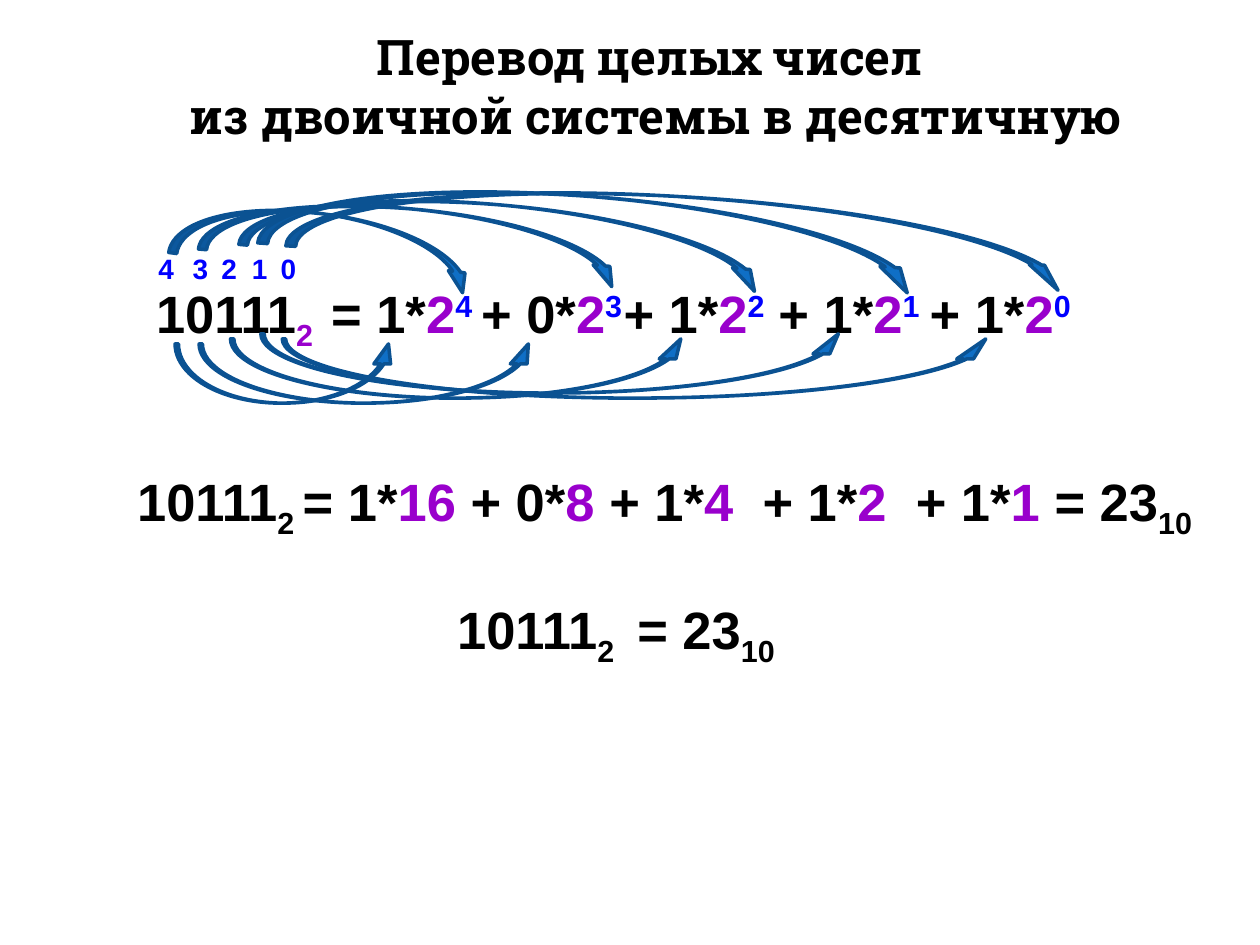
from pptx import Presentation
from pptx.dml.color import RGBColor
from pptx.enum.shapes import MSO_SHAPE
from pptx.enum.text import MSO_ANCHOR, MSO_AUTO_SIZE, PP_ALIGN
from pptx.util import Inches, Pt

CURVED_ARROW = MSO_SHAPE.CURVED_UP_ARROW
TOP, MIDDLE = MSO_ANCHOR.TOP, MSO_ANCHOR.MIDDLE
GROW = MSO_AUTO_SIZE.SHAPE_TO_FIT_TEXT
LEFT, CENTER = PP_ALIGN.LEFT, PP_ALIGN.CENTER

COLUMNS, ROWS = 100, 75
BLACK, PURPLE, BLUE = "000000", "9900CC", "0000FF"
ARROW_FILL, ARROW_LINE = "0F6FC6", "0B5292"
SUBSCRIPT = {"baseline": "-25000"}
SUPERSCRIPT = {"baseline": "30000"}
WIDE_SPACE = {"spc": "834"}
TITLE = {"name": "Roboto Slab", "size": Pt(28), "bold": True}
FORMULA = {"name": "Arial", "size": Pt(30), "bold": True}
POSITION = {"name": "Arial", "size": Pt(16), "bold": True}


def color(value):
    return RGBColor.from_string(value)


class Board:
    def __init__(self, presentation):
        self.slide = presentation.slides.add_slide(presentation.slide_layouts[6])
        self.column = presentation.slide_width / COLUMNS
        self.row = presentation.slide_height / ROWS

    def place(self, left, top, width, height):
        return (round(left * self.column), round(top * self.row),
                round(width * self.column), round(height * self.row))

    def text(self, area, lines, style, anchor=TOP, align=LEFT, auto_size=None):
        frame = self.slide.shapes.add_textbox(*self.place(*area)).text_frame
        frame.word_wrap = True
        frame.vertical_anchor = anchor
        if auto_size is not None:
            frame.auto_size = auto_size
        for index, line in enumerate(lines):
            paragraph = frame.add_paragraph() if index else frame.paragraphs[0]
            paragraph.alignment = align
            for words, shade, *extras in line:
                run = paragraph.add_run()
                run.text = words
                for key, value in style.items():
                    setattr(run.font, key, value)
                run.font.color.rgb = color(shade)
                for extra in extras:
                    for key, value in extra.items():
                        run.font._element.set(key, value)

    def formula(self, left, top, width, *runs):
        self.text((left, top, width, 7.1), [runs], FORMULA)

    def arrow(self, area, adjustments, rotation=0, flipped=False):
        arrow = self.slide.shapes.add_shape(CURVED_ARROW, *self.place(*area))
        arrow.shadow.inherit = False
        arrow.rotation = rotation
        for index, value in enumerate(adjustments):
            arrow.adjustments[index] = value
        if flipped:
            arrow._element.spPr.xfrm.set("flipV", "1")
        arrow.fill.solid()
        arrow.fill.fore_color.rgb = color(ARROW_FILL)
        arrow.line.color.rgb = color(ARROW_LINE)
        arrow.line.width = Pt(2)


def main():
    presentation = Presentation()
    presentation.slide_width, presentation.slide_height = Inches(10), Inches(7.5)
    board = Board(presentation)

    board.text((5.9, 2.1, 92.3, 9.4),
               [[("Перевод целых чисел ", BLACK)],
                [("из двоичной системы в десятичную", BLACK)]],
               TITLE, MIDDLE, CENTER)

    term_top, sum_top, answer_top = 21.8, 36.7, 46.9
    board.formula(11.4, term_top, 18.6, ("10111", BLACK), ("2", PURPLE, SUBSCRIPT))

    expansion = [("10111", BLACK), ("2 ", BLACK, SUBSCRIPT)]
    products = [("= 1*", "16", {}), ("+ 0*", "8", {}), ("+ 1*", "4", WIDE_SPACE),
                ("+ 1*", "2", WIDE_SPACE), ("+ 1*", "1", {})]
    for factor, weight, gap in products:
        expansion += [(factor, BLACK), (weight, PURPLE), (" ", PURPLE, gap)]
    expansion += [("= 23", BLACK), ("10", BLACK, SUBSCRIPT)]
    board.formula(9.9, sum_top, 88, *expansion)

    digits = [
        ("4", 11.6, 25.3, (13.9, 27.3, 17.6), (13.6, 17, 24.2, 4.7), 7.8, 0.283),
        ("3", 14.3, 37.2, (15.8, 27.3, 26.8), (15.9, 16.6, 33.6, 4.7), 5.2, 0.283),
        ("2", 16.6, 48.5, (18.3, 26.9, 36.4), (19.1, 16.3, 41.8, 5), 5.2, 0.283),
        ("1", 19, 60.8, (20.7, 26.5, 46.5), (20.6, 15.6, 52.5, 5.7), 4.4, 0.283),
        ("0", 21.3, 72.8, (22.4, 26.9, 56.5), (22.8, 15.6, 62, 5.7), 3.3, 0.215),
    ]
    for (power, power_left, term_left, lower, upper, tilt, head), product in zip(digits, products):
        board.text((power_left, 19.5, 2.4, 3.7), [[(power, BLUE)]], POSITION, auto_size=GROW)
        board.formula(term_left, term_top, 13.8, (product[0], BLACK), ("2", PURPLE),
                      (power, BLUE, SUPERSCRIPT))
        board.arrow((*lower, 4.7), (0.057, 0.283, 0.338))
        board.arrow(upper, (0.136, head, 0.338), tilt, True)

    board.formula(35.3, answer_top, 15.6, ("10111", BLACK), ("2", BLACK, SUBSCRIPT))
    board.formula(49.6, answer_top, 13.4, ("= 23", BLACK), ("10", BLACK, SUBSCRIPT))

    presentation.save("out.pptx")


if __name__ == "__main__":
    main()
